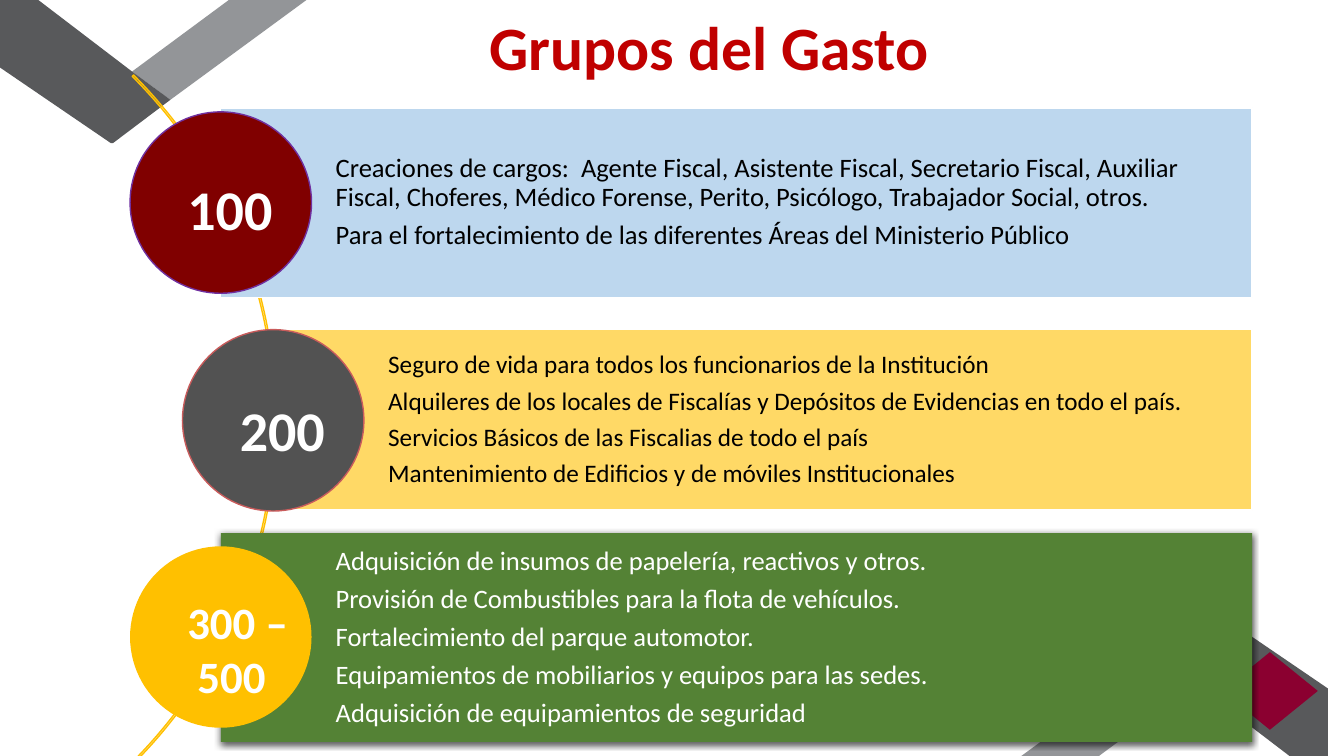
import dataclasses
import typing

import pptx
import pptx.dml.color
import pptx.enum.shapes
import pptx.enum.text
import pptx.oxml.ns
import pptx.util
from lxml import etree

PX = 9144
WIDTH, HEIGHT = 1333, 750
BAND_SPAN = 1317
FONT = "Calibri"

RGBColor = pptx.dml.color.RGBColor
Shapes = pptx.enum.shapes.MSO_SHAPE
Anchor = pptx.enum.text.MSO_ANCHOR
Align = pptx.enum.text.PP_ALIGN

WHITE = RGBColor(0xFF, 0xFF, 0xFF)
BLACK = RGBColor(0x00, 0x00, 0x00)
RED = RGBColor(0xC0, 0x00, 0x00)
CRIMSON = RGBColor(0x8B, 0x00, 0x30)
LIGHT_GREY = RGBColor(0x93, 0x95, 0x98)
DARK_GREY = RGBColor(0x58, 0x59, 0x5B)
CHARCOAL = RGBColor(0x52, 0x52, 0x52)
MAROON = RGBColor(0x80, 0x00, 0x00)
PURPLE = RGBColor(0x70, 0x30, 0xA0)
CORAL = RGBColor(0xC9, 0x5C, 0x5C)
AMBER = RGBColor(0xFF, 0xC0, 0x00)
PALE_BLUE = RGBColor(0xBD, 0xD7, 0xEE)
PALE_YELLOW = RGBColor(0xFF, 0xD9, 0x66)
GREEN = RGBColor(0x54, 0x82, 0x35)


class Box(typing.NamedTuple):
    left: int
    top: int
    width: int
    height: int

    def emu(self) -> list[int]:
        return [length * PX for length in self]


class Band(typing.NamedTuple):
    color: RGBColor
    points: list[tuple[int, int]]


@dataclasses.dataclass
class Group:
    panel: Box
    panel_fill: RGBColor
    panel_line: RGBColor | None
    text_color: RGBColor
    text_size: int
    items: list[str]
    circle: Box
    circle_fill: RGBColor
    circle_line: RGBColor | None
    label: Box
    label_size: int
    label_lines: list[str]
    raised: bool = False


BANDS = [
    Band(LIGHT_GREY, [(304, 0), (227, 0), (131, 71), (169, 99)]),
    Band(DARK_GREY, [(38, 0), (0, 0), (0, 67), (110, 142), (112, 142), (169, 99), (131, 71)]),
]

GROUPS = [
    Group(
        Box(219, 107, 1023, 188), PALE_BLUE, WHITE, BLACK, 19,
        [
            "Creaciones de cargos:  Agente Fiscal, Asistente Fiscal, Secretario Fiscal, "
            "Auxiliar Fiscal, Choferes, Médico Forense, Perito, Psicólogo, Trabajador Social, otros.",
            "Para el fortalecimiento de las diferentes Áreas del Ministerio Público",
        ],
        Box(129, 111, 180, 180), MAROON, PURPLE,
        Box(176, 168, 105, 77), 40, ["100"],
    ),
    Group(
        Box(271, 327, 971, 179), PALE_YELLOW, WHITE, BLACK, 18,
        [
            "Seguro de vida para todos los funcionarios de la Institución",
            "Alquileres de los locales de Fiscalías y Depósitos de Evidencias en todo el país.",
            "Servicios Básicos de las Fiscalias de todo el país",
            "Mantenimiento de Edificios y de móviles Institucionales",
        ],
        Box(181, 327, 180, 180), CHARCOAL, CORAL,
        Box(228, 387, 105, 77), 40, ["200"],
    ),
    Group(
        Box(219, 529, 1023, 207), GREEN, None, WHITE, 19,
        [
            "Adquisición de insumos de papelería, reactivos y otros.",
            "Provisión de Combustibles para la flota de vehículos.",
            "Fortalecimiento del parque automotor.",
            "Equipamientos de mobiliarios y equipos para las sedes.",
            "Adquisición de equipamientos de seguridad",
        ],
        Box(129, 542, 180, 180), AMBER, None,
        Box(176, 585, 157, 118), 32, ["300 –", " 500"],
        raised=True,
    ),
]


def paint(shape, fill: RGBColor | None, line: RGBColor | None) -> None:
    shape.shadow.inherit = False
    if fill is None:
        shape.fill.background()
    else:
        shape.fill.solid()
        shape.fill.fore_color.rgb = fill
    if line is None:
        shape.line.fill.background()
    else:
        shape.line.color.rgb = line
        shape.line.width = pptx.util.Pt(1)


def add_preset(page, kind, box: Box, fill: RGBColor | None, line: RGBColor | None):
    shape = page.shapes.add_shape(kind, *box.emu())
    paint(shape, fill, line)
    return shape


def add_band(page, color: RGBColor, points: list[tuple[int, int]]) -> None:
    builder = page.shapes.build_freeform(*points[0], scale=PX)
    builder.add_line_segments(points[1:], close=True)
    paint(builder.convert_to_shape(), color, None)


def add_shadow(shape) -> None:
    effects = shape._element.spPr.find(pptx.oxml.ns.qn("a:effectLst"))
    shadow = etree.SubElement(
        effects, pptx.oxml.ns.qn("a:outerShdw"),
        blurRad=str(pptx.util.Pt(4.5)), dist=str(pptx.util.Pt(1.5)), dir="5400000",
    )
    color = etree.SubElement(shadow, pptx.oxml.ns.qn("a:srgbClr"), val=str(BLACK))
    etree.SubElement(color, pptx.oxml.ns.qn("a:alpha"), val="63000")


def write_lines(frame, lines: list[str], size: int, color: RGBColor,
                bold: bool = False, align=Align.LEFT, listed: bool = False) -> None:
    frame.word_wrap = True
    for index, line in enumerate(lines):
        para = frame.paragraphs[0] if index == 0 else frame.add_paragraph()
        para.alignment = align
        if listed:
            para.line_spacing = 0.9
            para.space_after = pptx.util.Pt(size * 0.35)
        span = para.add_run()
        span.text = line
        span.font.name = FONT
        span.font.size = pptx.util.Pt(size)
        span.font.bold = bold
        span.font.color.rgb = color


def add_panel(page, group: Group) -> None:
    panel = add_preset(page, Shapes.RECTANGLE, group.panel, group.panel_fill, group.panel_line)
    if group.raised:
        add_shadow(panel)
    frame = panel.text_frame
    frame.vertical_anchor = Anchor.MIDDLE
    frame.margin_left = 114 * PX
    frame.margin_top = frame.margin_right = frame.margin_bottom = 5 * PX
    write_lines(frame, group.items, group.text_size, group.text_color, listed=True)
    add_preset(page, Shapes.OVAL, group.circle, group.circle_fill, group.circle_line)
    label = page.shapes.add_textbox(*group.label.emu())
    write_lines(label.text_frame, group.label_lines, group.label_size, WHITE, bold=True)


def set_title(page, text: str, box: Box) -> None:
    title = page.shapes.title
    title.left, title.top, title.width, title.height = box.emu()
    title.text_frame.vertical_anchor = Anchor.MIDDLE
    write_lines(title.text_frame, [text], 44, RED, bold=True, align=Align.CENTER)


def main() -> None:
    deck = pptx.Presentation()
    deck.slide_width, deck.slide_height = WIDTH * PX, HEIGHT * PX
    page = deck.slides.add_slide(deck.slide_layouts[5])
    set_title(page, "Grupos del Gasto", Box(389, 0, 629, 92))
    for band in BANDS:
        add_band(page, band.color, band.points)
        add_band(page, band.color, [(BAND_SPAN - x, HEIGHT - y) for x, y in band.points])
    add_preset(page, Shapes.DIAMOND, Box(1212, 647, 95, 77), CRIMSON, None)
    arc = add_preset(page, Shapes.BLOCK_ARC, Box(-692, -67, 966, 966), None, AMBER)
    for index, value in enumerate((189, 27, 0.002)):
        arc.adjustments[index] = value
    for group in GROUPS:
        add_panel(page, group)
    deck.save("out.pptx")


if __name__ == "__main__":
    main()
